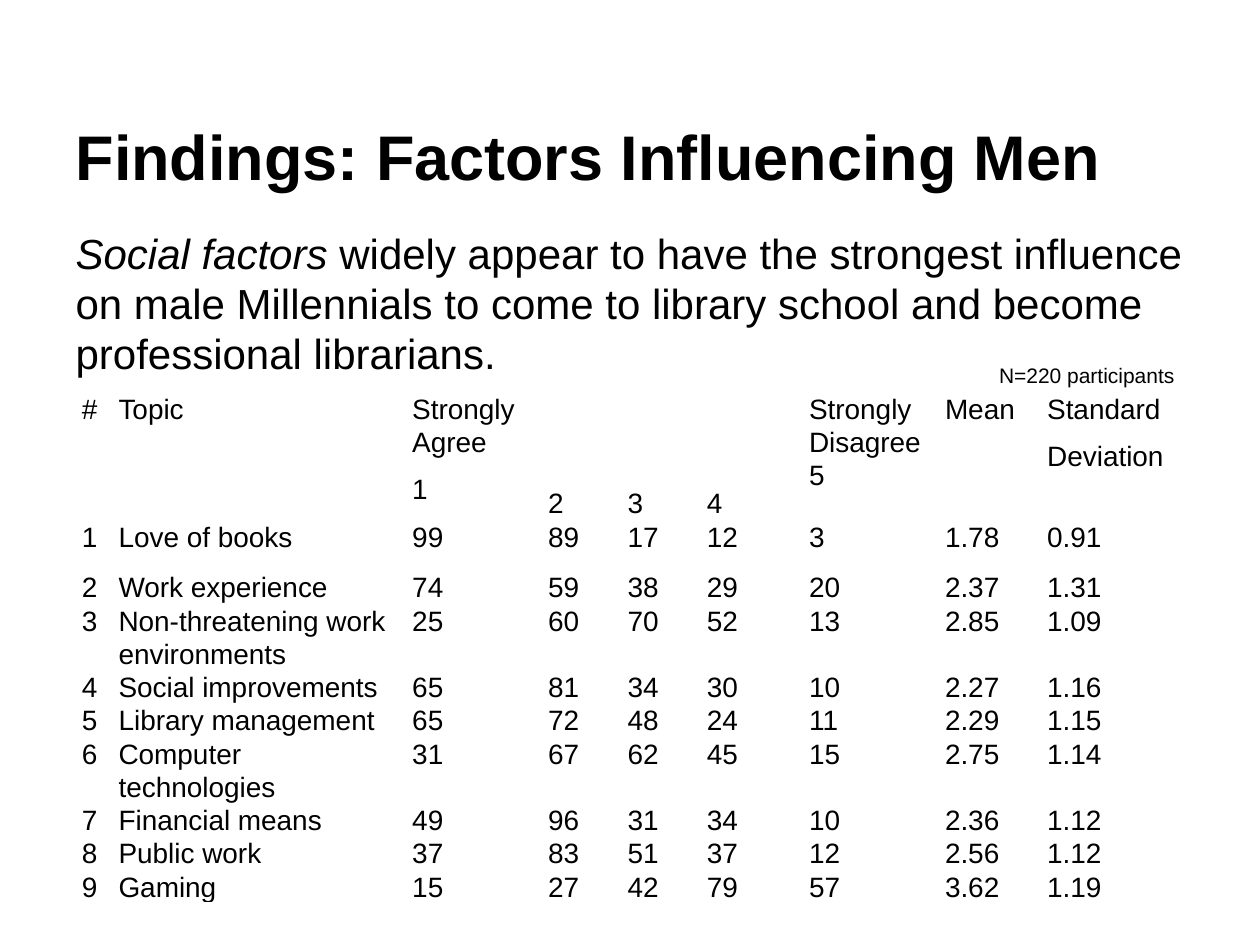
from dataclasses import dataclass

from lxml import etree
from pptx import Presentation
from pptx.dml.color import RGBColor
from pptx.enum.text import MSO_ANCHOR, MSO_AUTO_SIZE, PP_ALIGN
from pptx.oxml.ns import qn
from pptx.util import Cm, Pt

LEFT = PP_ALIGN.LEFT
TOP, MIDDLE, BOTTOM = MSO_ANCHOR.TOP, MSO_ANCHOR.MIDDLE, MSO_ANCHOR.BOTTOM
NO_AUTOFIT = MSO_AUTO_SIZE.NONE


@dataclass(frozen=True)
class Theme:
    font: str = "Arial"
    ink: RGBColor = RGBColor(0, 0, 0)
    title: int = 36
    body: int = 24
    table: int = 16
    note: int = 12


THEME = Theme()

# Each header cell is a list of paragraphs
HEADERS = [
    ["#"], ["Topic"], ["Strongly Agree", "1"], ["2"], ["3"], ["4"],
    ["Strongly Disagree 5"], ["Mean"], ["Standard", "Deviation"],
]
SCALE_COLUMNS = (3, 4, 5)
FACTORS = [
    ("Love of books", 99, 89, 17, 12, 3, 1.78, 0.91),
    ("Work experience", 74, 59, 38, 29, 20, 2.37, 1.31),
    ("Non-threatening work environments", 25, 60, 70, 52, 13, 2.85, 1.09),
    ("Social improvements", 65, 81, 34, 30, 10, 2.27, 1.16),
    ("Library management", 65, 72, 48, 24, 11, 2.29, 1.15),
    ("Computer technologies", 31, 67, 62, 45, 15, 2.75, 1.14),
    ("Financial means", 49, 96, 31, 34, 10, 2.36, 1.12),
    ("Public work", 37, 83, 51, 37, 12, 2.56, 1.12),
    ("Gaming", 15, 27, 42, 79, 57, 3.62, 1.19),
]
COLUMN_WIDTHS = [0.74, 5.92, 2.74, 1.6, 1.6, 2.06, 2.74, 2.06, 3]
HEADER_HEIGHT, FIRST_HEIGHT, SINGLE_HEIGHT, DOUBLE_HEIGHT = 2.58, 1.02, 0.67, 1.34
TWO_LINE_FACTORS = (3, 6)


def add_run(paragraph, text, size, bold=False, italic=False):
    run = paragraph.add_run()
    run.text = text
    font = run.font
    font.name, font.size = THEME.font, Pt(size)
    font.bold, font.italic = bold, italic
    font.color.rgb = THEME.ink


def place(shape, box):
    shape.left, shape.top, shape.width, shape.height = (Cm(value) for value in box)


def prepare_frame(shape, anchor):
    frame = shape.text_frame
    frame.word_wrap = True
    frame.auto_size = NO_AUTOFIT
    frame.vertical_anchor = anchor
    paragraph = frame.paragraphs[0]
    paragraph.alignment = LEFT
    return paragraph


def add_title(slide, box):
    shape = slide.shapes.title
    place(shape, box)
    paragraph = prepare_frame(shape, MIDDLE)
    add_run(paragraph, "Findings: Factors Influencing Men", THEME.title, bold=True)


def add_summary(slide, box):
    shape = slide.placeholders[1]
    place(shape, box)
    paragraph = prepare_frame(shape, TOP)
    # Plain paragraph without bullet or hanging indent
    properties = paragraph._p.get_or_add_pPr()
    properties.set("marL", "0")
    properties.set("indent", "0")
    etree.SubElement(properties, qn("a:buNone"))
    paragraph.space_before = Pt(0)
    add_run(paragraph, "Social factors ", THEME.body, italic=True)
    add_run(
        paragraph,
        "widely appear to have the strongest influence on male Millennials "
        "to come to library school and become professional librarians.",
        THEME.body,
    )


def fill_cell(cell, lines, anchor=TOP):
    cell.fill.background()
    cell.vertical_anchor = anchor
    cell.margin_left = cell.margin_right = Cm(0.18)
    cell.margin_top = cell.margin_bottom = 0
    frame = cell.text_frame
    for index, line in enumerate(lines):
        paragraph = frame.add_paragraph() if index else frame.paragraphs[0]
        paragraph.line_spacing = 1.07
        paragraph.space_after = Pt(8)
        add_run(paragraph, line, THEME.table)


def row_height(number):
    if number == 0:
        return HEADER_HEIGHT
    if number == 1:
        return FIRST_HEIGHT
    return DOUBLE_HEIGHT if number in TWO_LINE_FACTORS else SINGLE_HEIGHT


def add_factor_table(slide, left, top):
    heights = [row_height(number) for number in range(len(FACTORS) + 1)]
    table = slide.shapes.add_table(
        len(heights), len(COLUMN_WIDTHS), Cm(left), Cm(top),
        Cm(sum(COLUMN_WIDTHS)), Cm(sum(heights)),
    ).table
    table.first_row = table.horz_banding = False
    for column, width in zip(table.columns, COLUMN_WIDTHS):
        column.width = Cm(width)
    for row, height in zip(table.rows, heights):
        row.height = Cm(height)

    # Header row, with the inner scale values at the foot
    for index, lines in enumerate(HEADERS):
        anchor = BOTTOM if index in SCALE_COLUMNS else TOP
        fill_cell(table.cell(0, index), lines, anchor)

    # One numbered row per factor
    for number, factor in enumerate(FACTORS, 1):
        for index, value in enumerate((number, *factor)):
            fill_cell(table.cell(number, index), [str(value)])


def add_sample_note(slide, box):
    shape = slide.shapes.add_textbox(*(Cm(value) for value in box))
    paragraph = prepare_frame(shape, TOP)
    add_run(paragraph, "N=220 participants", THEME.note)


def main():
    presentation = Presentation()
    presentation.slide_width, presentation.slide_height = Cm(25.4), Cm(19.05)
    slide = presentation.slides.add_slide(presentation.slide_layouts[1])
    add_title(slide, (1.27, 2.11, 22.86, 2.03))
    add_summary(slide, (1.27, 4.45, 23.34, 3.91))
    add_factor_table(slide, 1.47, 7.9)
    add_sample_note(slide, (19.89, 7.19, 5.51, 0.76))
    presentation.save("out.pptx")


if __name__ == "__main__":
    main()
